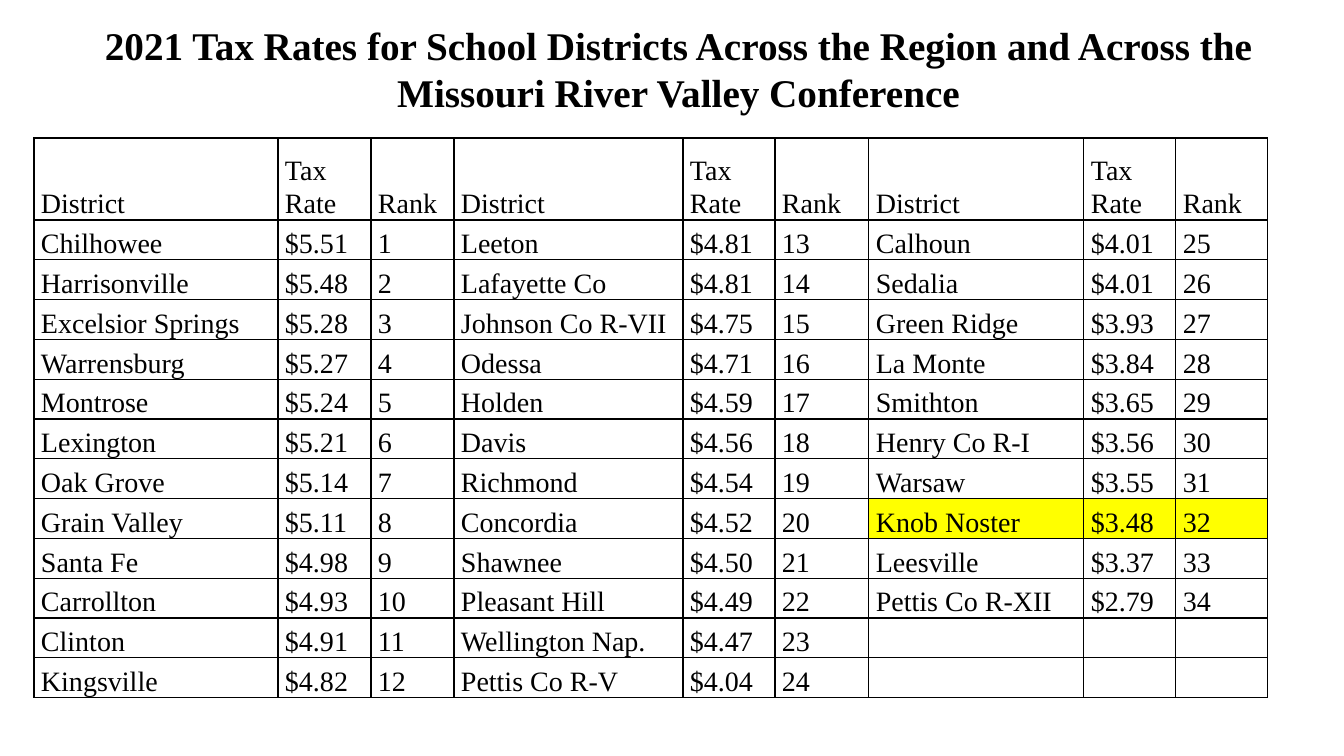
from lxml.etree import SubElement
from pptx import Presentation
from pptx.dml.color import RGBColor
from pptx.enum.text import MSO_ANCHOR, MSO_AUTO_SIZE, PP_ALIGN
from pptx.oxml.ns import qn
from pptx.util import Pt

TITLE = ("2021 Tax Rates for School Districts Across the Region "
         "and Across the Missouri River Valley Conference")
HEADS = ["District", "Tax Rate", "Rank"]
# Listed from the highest rate to the lowest, so the place is the rank.
RATES = [
    ("Chilhowee", "$5.51"), ("Harrisonville", "$5.48"),
    ("Excelsior Springs", "$5.28"), ("Warrensburg", "$5.27"),
    ("Montrose", "$5.24"), ("Lexington", "$5.21"),
    ("Oak Grove", "$5.14"), ("Grain Valley", "$5.11"),
    ("Santa Fe", "$4.98"), ("Carrollton", "$4.93"),
    ("Clinton", "$4.91"), ("Kingsville", "$4.82"),
    ("Leeton", "$4.81"), ("Lafayette Co", "$4.81"),
    ("Johnson Co R-VII", "$4.75"), ("Odessa", "$4.71"),
    ("Holden", "$4.59"), ("Davis", "$4.56"),
    ("Richmond", "$4.54"), ("Concordia", "$4.52"),
    ("Shawnee", "$4.50"), ("Pleasant Hill", "$4.49"),
    ("Wellington Nap.", "$4.47"), ("Pettis Co R-V", "$4.04"),
    ("Calhoun", "$4.01"), ("Sedalia", "$4.01"),
    ("Green Ridge", "$3.93"), ("La Monte", "$3.84"),
    ("Smithton", "$3.65"), ("Henry Co R-I", "$3.56"),
    ("Warsaw", "$3.55"), ("Knob Noster", "$3.48"),
    ("Leesville", "$3.37"), ("Pettis Co R-XII", "$2.79"),
]
MARKED = "Knob Noster"
DEPTH = 12
WIDTHS = [244, 93, 83, 229, 92, 94, 215, 92, 92]
HEAD, BODY = 82, 478

BLACK = RGBColor(0, 0, 0)
YELLOW = RGBColor(255, 255, 0)
FACE = "Times New Roman"


def px(count):
    return round(count * 12192000 / 1344)


def put(thing, values):
    for name, value in values.items():
        setattr(thing, name, value)


def style(para, size, bold):
    put(para.font, {"name": FACE, "size": Pt(size), "bold": bold})
    para.font.color.rgb = BLACK


def frame(cell):
    """Give a cell a thin black line on all four sides."""
    props = cell._tc.get_or_add_tcPr()
    for side in ("lnL", "lnR", "lnT", "lnB"):
        line = SubElement(props, qn("a:" + side), w=str(Pt(1)))
        fill = SubElement(line, qn("a:solidFill"))
        SubElement(fill, qn("a:srgbClr"), val=str(BLACK))


def write(cell, text, marked):
    frame(cell)
    put(cell, {"margin_left": px(7), "margin_right": px(7),
               "margin_top": 0, "margin_bottom": 0,
               "vertical_anchor": MSO_ANCHOR.BOTTOM})
    if marked:
        cell.fill.solid()
        cell.fill.fore_color.rgb = YELLOW
    else:
        cell.fill.background()
    para = cell.text_frame.paragraphs[0]
    para.text = text
    para.line_spacing = 1.07
    style(para, 20, False)


def add_title(slide):
    title = slide.shapes.title
    put(title, {"left": px(34), "top": px(16),
                "width": px(1289), "height": px(105)})
    put(title.text_frame, {"text": TITLE, "word_wrap": True,
                           "auto_size": MSO_AUTO_SIZE.NONE,
                           "vertical_anchor": MSO_ANCHOR.MIDDLE})
    para = title.text_frame.paragraphs[0]
    para.alignment = PP_ALIGN.CENTER
    style(para, 28, True)


def add_rates(slide):
    """Fill three side-by-side groups of columns, each read downward."""
    grid = slide.shapes.add_table(DEPTH + 1, len(WIDTHS), px(34), px(138),
                                  px(sum(WIDTHS)), px(HEAD + BODY)).table
    put(grid, {"first_row": False, "horz_banding": False})
    for col, width in zip(grid.columns, WIDTHS):
        col.width = px(width)
    for num, row in enumerate(grid.rows):
        row.height = px(BODY / DEPTH) if num else px(HEAD)
        for col, cell in enumerate(row.cells):
            group, part = divmod(col, len(HEADS))
            place = group * DEPTH + num
            if num == 0:
                entry = HEADS
            elif place <= len(RATES):
                entry = [*RATES[place - 1], str(place)]
            else:
                entry = [""] * len(HEADS)
            write(cell, entry[part], entry[0] == MARKED)


def main():
    deck = Presentation()
    put(deck, {"slide_width": px(1344), "slide_height": px(756)})
    slide = deck.slides.add_slide(deck.slide_layouts[5])
    add_title(slide)
    add_rates(slide)
    deck.save("out.pptx")


if __name__ == "__main__":
    main()
